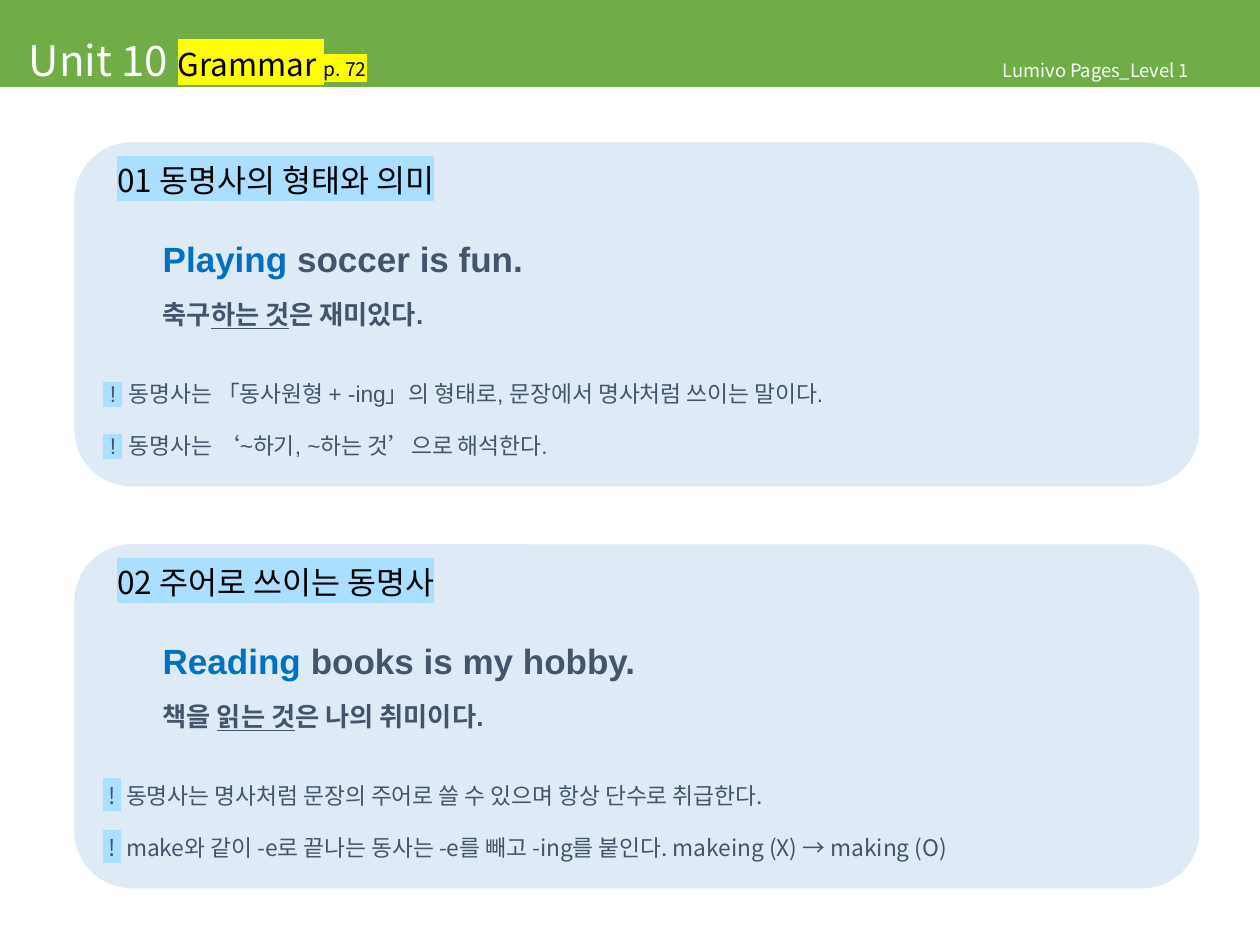
from lxml import etree
from pptx import Presentation
from pptx.dml.color import RGBColor
from pptx.enum.shapes import MSO_SHAPE
from pptx.enum.text import MSO_ANCHOR, PP_ALIGN
from pptx.oxml.ns import qn
from pptx.util import Inches, Pt

RECT = MSO_SHAPE.RECTANGLE
ROUND = MSO_SHAPE.ROUNDED_RECTANGLE
TOP = MSO_ANCHOR.TOP
BOTTOM = MSO_ANCHOR.BOTTOM
LEFT = PP_ALIGN.LEFT

NOTO = "Noto Sans CJK KR"
ARIAL = "Arial"
WHITE, BLACK, GREEN = "FFFFFF", "000000", "70AD47"
PALE, SLATE, BLUE = "DEEBF7", "44546A", "0070C0"
YELLOW, SKY = "FFFF00", "ABDFFF"


def color(code):
    return RGBColor.from_string(code)


class Deck:
    def __init__(self):
        self.file = Presentation()
        self.file.slide_width = Inches(10)
        self.file.slide_height = Inches(7.5)
        self.slide = self.file.slides.add_slide(self.file.slide_layouts[6])

    def frame(self, shape, pads, anchor):
        frame = shape.text_frame
        frame.word_wrap = True
        frame.vertical_anchor = anchor
        left, top, right, bottom = map(Inches, pads)
        frame.margin_left, frame.margin_top = left, top
        frame.margin_right, frame.margin_bottom = right, bottom
        return frame

    def box(self, kind, area, fill, pads, anchor=TOP):
        shape = self.slide.shapes.add_shape(kind, *map(Inches, area))
        shape.shadow.inherit = False
        shape.fill.solid()
        shape.fill.fore_color.rgb = color(fill)
        shape.line.fill.background()
        return self.frame(shape, pads, anchor)

    def label(self, area, pads):
        shape = self.slide.shapes.add_textbox(*map(Inches, area))
        return self.frame(shape, pads, TOP)

    def line(self, frame, runs, height, before=0, indent=0):
        para = frame.paragraphs[0]
        if para.runs:
            para = frame.add_paragraph()
        para.alignment = LEFT
        para.line_spacing = Pt(height)
        para.space_before = Pt(before)
        para._p.get_or_add_pPr().set("marL", str(Inches(indent)))
        for run in runs:
            self.run(para, *run)

    def run(self, para, text, size, ink, face=NOTO, mark=None, bold=False, under=False):
        run = para.add_run()
        run.text = text
        font = run.font
        font.size, font.bold, font.underline = Pt(size), bold, under
        font.color.rgb = color(ink)
        font.name = face
        props = run._r.get_or_add_rPr()
        latin = props.find(qn("a:latin"))
        east = etree.Element(qn("a:ea"), typeface=NOTO)
        latin.addnext(east)
        if mark:
            light = etree.Element(qn("a:highlight"))
            etree.SubElement(light, qn("a:srgbClr"), val=mark)
            latin.addprevious(light)

    def panel(self, top, title, verb, rest, korean, notes, face):
        frame = self.box(ROUND, (0.59, top, 8.93, 2.73), PALE, (0.1, 0.05, 0.1, 0.05))
        self.line(frame, [(title, 18, BLACK, NOTO, SKY)], 19, indent=0.11)
        words = [(verb, 20, BLUE, ARIAL, None, True),
                 (rest, 20, SLATE, ARIAL, None, True)]
        self.line(frame, words, 19, 27, 0.47)
        parts = [(text, 15, SLATE, ARIAL, None, True, spot == 1)
                 for spot, text in enumerate(korean)]
        self.line(frame, parts, 18, 11, 0.47)
        for note, gap in zip(notes, (24, 9.7)):
            pair = [(" ! ", 13, SLATE, face, SKY), (" " + note, 13, SLATE, face)]
            self.line(frame, pair, 20, gap)

    def save(self):
        self.file.save("out.pptx")


def main():
    deck = Deck()
    head = deck.box(RECT, (0, 0, 10, 0.69), GREEN, (0.23, 0, 0.1, 0.02), BOTTOM)
    deck.line(head, [("Unit 10 ", 24, WHITE),
                     ("Grammar ", 18, BLACK, NOTO, YELLOW),
                     ("p. 72", 11, BLACK, NOTO, YELLOW)], 30)
    book = deck.label((7.89, 0.45, 1.93, 0.26), (0.07, 0.04, 0.07, 0.04))
    deck.line(book, [("Lumivo Pages_Level 1", 10.5, WHITE)], 11)

    deck.panel(
        1.13, "01 동명사의 형태와 의미", "Playing", " soccer is fun.",
        ("축구", "하는 것", "은 재미있다."),
        ("동명사는 「동사원형 + -ing」의 형태로, 문장에서 명사처럼 쓰이는 말이다.",
         "동명사는 ‘~하기, ~하는 것’으로 해석한다."),
        ARIAL)
    deck.panel(
        4.32, "02 주어로 쓰이는 동명사", "Reading", " books is my hobby.",
        ("책을 ", "읽는 것", "은 나의 취미이다."),
        ("동명사는 명사처럼 문장의 주어로 쓸 수 있으며 항상 단수로 취급한다.",
         "make와 같이 -e로 끝나는 동사는 -e를 빼고 -ing를 붙인다. makeing (X) → making (O)"),
        NOTO)
    deck.save()


if __name__ == "__main__":
    main()
